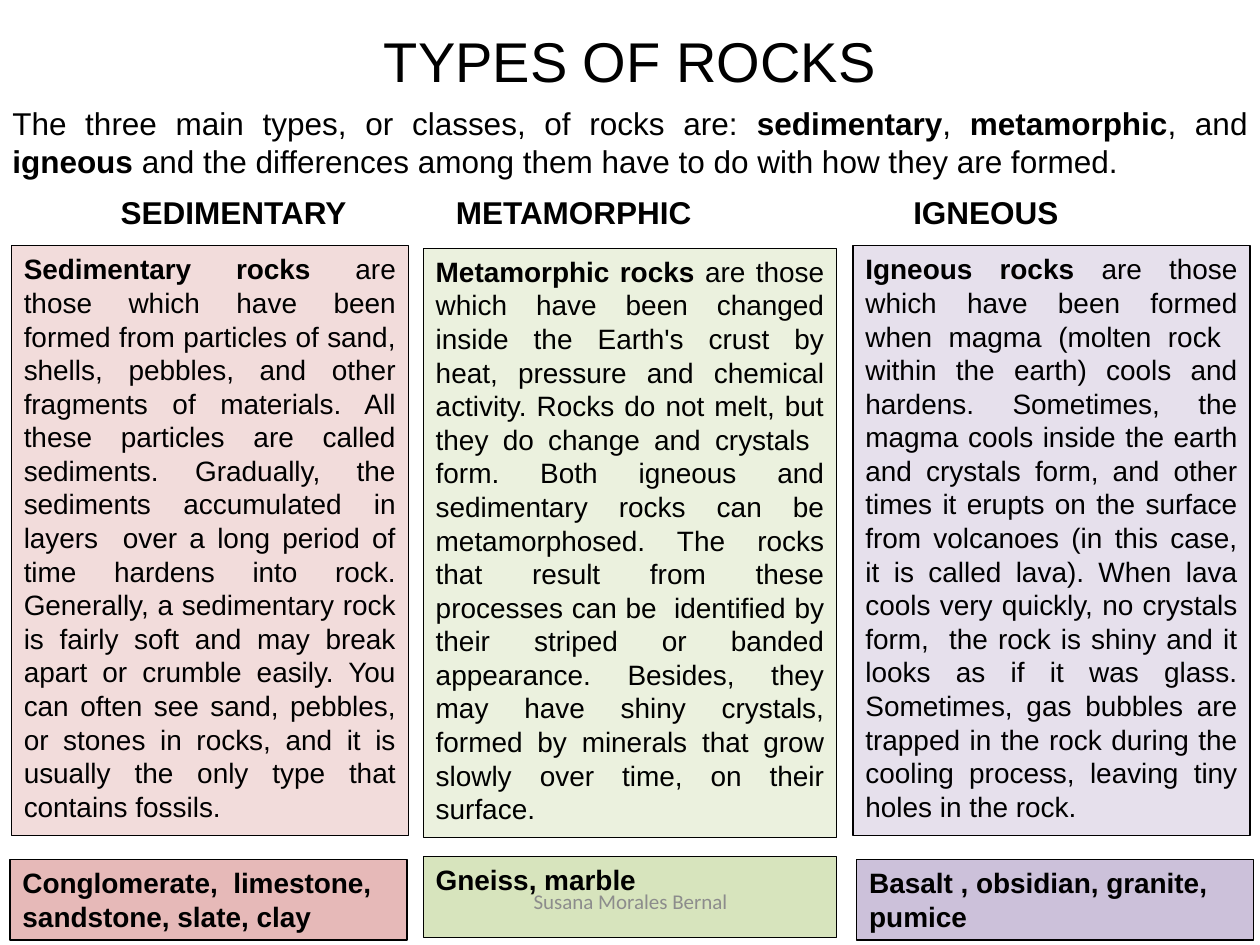
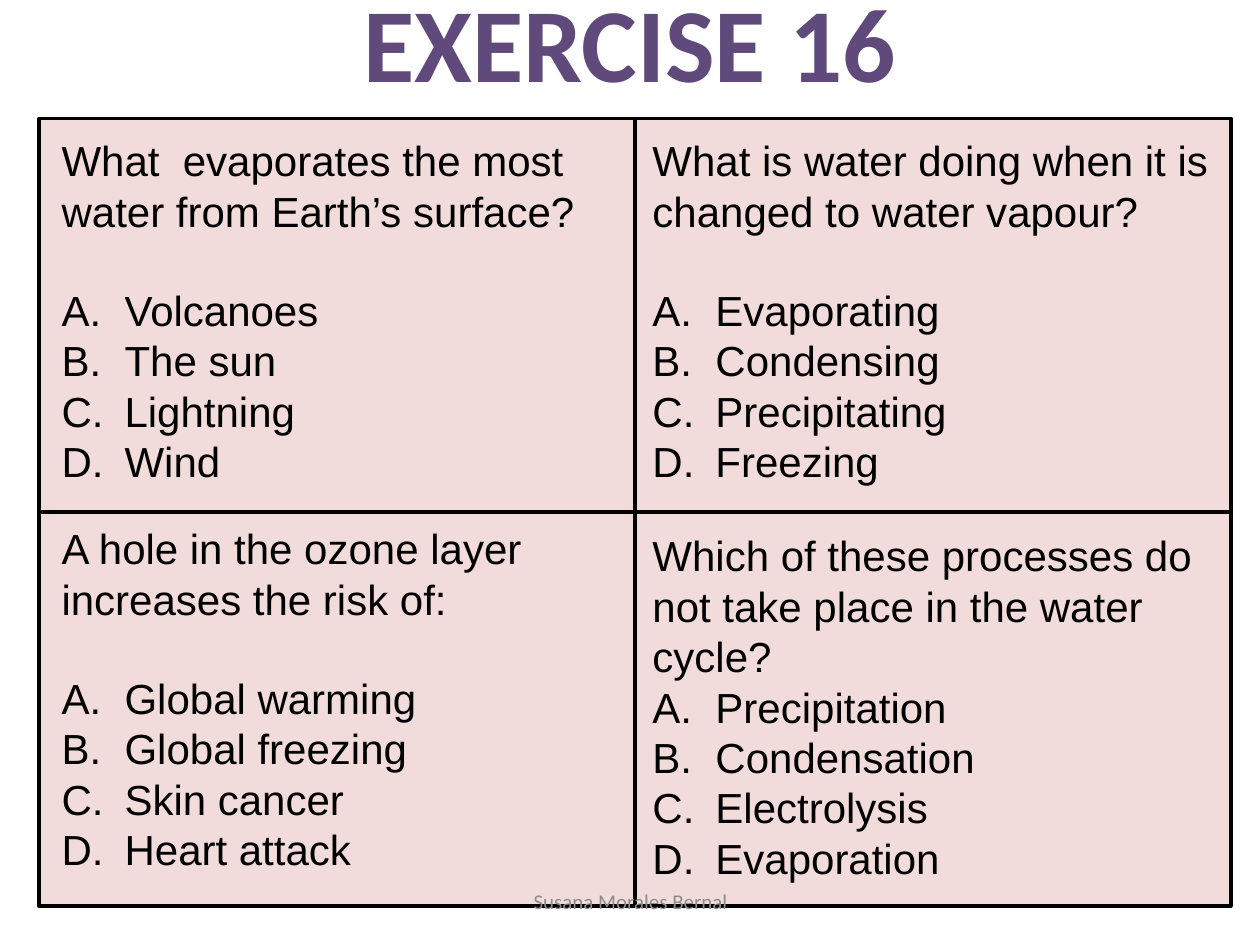
"""Build two science slides: the types of rocks and a four-question exercise."""
from lxml.etree import SubElement
from pptx import Presentation
from pptx.dml.color import RGBColor
from pptx.enum.shapes import MSO_CONNECTOR, MSO_SHAPE
from pptx.enum.text import MSO_ANCHOR, PP_ALIGN
from pptx.oxml.ns import qn
from pptx.util import Inches, Pt

BLACK = RGBColor(0x00, 0x00, 0x00)
GREY = RGBColor(0x8C, 0x8C, 0x8C)
PURPLE = RGBColor(0x60, 0x4A, 0x7B)
PALE_RED = RGBColor(0xF2, 0xDC, 0xDB)
PALE_GREEN = RGBColor(0xEB, 0xF1, 0xDE)
PALE_PURPLE = RGBColor(0xE6, 0xE0, 0xEC)
RED = RGBColor(0xE6, 0xB9, 0xB8)
GREEN = RGBColor(0xD7, 0xE4, 0xBD)
LILAC = RGBColor(0xCC, 0xC1, 0xDA)

FOOTER = "Susana Morales Bernal"
ROCKS_TITLE = "TYPES OF ROCKS"
INTRO = [
    ("The three main types, or classes, of rocks are: ", False),
    ("sedimentary", True), (", ", False), ("metamorphic", True), (", and ", False),
    ("igneous", True),
    (" and the differences among them have to do with how they are formed.", False),
]
ROCKS = [
    {
        "heading": "SEDIMENTARY", "heading_at": (0.86, 1.48, 2.01, 0.4),
        "term": "Sedimentary rocks",
        "text": " are those which have been formed from particles of sand, shells, pebbles, "
                "and other fragments of materials. All these particles are called sediments. "
                "Gradually, the sediments accumulated in layers  over a long period of time "
                "hardens into rock. Generally, a sedimentary rock is fairly soft and may break "
                "apart or crumble easily. You can often see sand, pebbles, or stones in rocks, "
                "and it is usually the only type that contains fossils.",
        "text_at": (0.09, 1.95, 3.15, 4.68), "pale": PALE_RED,
        "examples": "Conglomerate,  limestone, sandstone, slate, clay",
        "examples_at": (0.08, 6.82, 3.15, 0.64), "strong": RED,
    },
    {
        "heading": "METAMORPHIC", "heading_at": (3.52, 1.48, 2.09, 0.4),
        "term": "Metamorphic rocks",
        "text": " are those which have been changed inside the Earth's crust by heat, pressure "
                "and chemical activity. Rocks do not melt, but they do change and crystals  form. "
                "Both igneous and sedimentary rocks can be metamorphosed. The rocks that result "
                "from these processes can be  identified by their striped or banded appearance. "
                "Besides, they may have shiny crystals, formed by minerals that grow slowly over "
                "time, on their surface.",
        "text_at": (3.36, 1.97, 3.28, 4.68), "pale": PALE_GREEN,
        "examples": "Gneiss, marble",
        "examples_at": (3.36, 6.8, 3.28, 0.64), "strong": GREEN,
    },
    {
        "heading": "IGNEOUS", "heading_at": (7.15, 1.48, 1.37, 0.4),
        "term": "Igneous rocks",
        "text": " are those which have been formed when magma (molten rock  within the earth) "
                "cools and hardens. Sometimes, the magma cools inside the earth and crystals form, "
                "and other times it erupts on the surface from volcanoes (in this case, it is "
                "called lava). When lava cools very quickly, no crystals form,  the rock is shiny "
                "and it looks as if it was glass. Sometimes, gas bubbles are trapped in the rock "
                "during the cooling process, leaving tiny holes in the rock.",
        "text_at": (6.77, 1.95, 3.15, 4.68), "pale": PALE_PURPLE,
        "examples": "Basalt , obsidian, granite, pumice",
        "examples_at": (6.8, 6.82, 3.15, 0.64), "strong": LILAC,
    },
]

EXERCISE_TITLE = "EXERCISE 16"
QUESTION_SIZE = (4.61, 2.93)
QUESTIONS = [
    ("What  evaporates the most water from Earth’s surface?",
     ["Volcanoes", "The sun", "Lightning", "Wind"], (0.39, 1.02), 28),
    ("What is water doing when it is changed to water vapour?",
     ["Evaporating", "Condensing", "Precipitating", "Freezing"], (5.08, 1.02), 28),
    ("A hole in the ozone layer increases the risk of:",
     ["Global warming", "Global freezing", "Skin cancer", "Heart attack"], (0.39, 4.1), 28),
    ("Which of these processes do not take place in the water cycle?",
     ["Precipitation", "Condensation", "Electrolysis", "Evaporation"], (5.08, 4.14), 0),
]
GRID = (0.31, 0.94, 9.46, 6.25)


def write(para, spans, align=PP_ALIGN.LEFT, **font):
    """Fill a paragraph with (text, bold) spans in one font."""
    para.alignment = align
    style = {"name": "Arial", "size": 16, "color": BLACK, **font}
    for text, bold in spans:
        span = para.add_run()
        span.text = text
        values = {"name": style["name"], "size": Pt(style["size"]), "bold": bold}
        for key, value in values.items():
            setattr(span.font, key, value)
        span.font.color.rgb = style["color"]


def add_text(page, at, spans, wrap=True, anchor=MSO_ANCHOR.TOP, **style):
    """Add a text box with one paragraph."""
    box = page.shapes.add_textbox(*map(Inches, at))
    box.text_frame.word_wrap = wrap
    box.text_frame.vertical_anchor = anchor
    write(box.text_frame.paragraphs[0], spans, **style)


def add_panel(page, at, fill, line_width=0):
    """Add a filled rectangle, outlined in black when it has a line width."""
    panel = page.shapes.add_shape(MSO_SHAPE.RECTANGLE, *map(Inches, at))
    panel.shadow.inherit = False
    panel.fill.solid()
    panel.fill.fore_color.rgb = fill
    if line_width:
        panel.line.color.rgb = BLACK
        panel.line.width = Pt(line_width)
    else:
        panel.line.fill.background()
    panel.text_frame.word_wrap = True
    panel.text_frame.vertical_anchor = MSO_ANCHOR.TOP
    return panel


def add_divider(page, *ends):
    """Add a straight black grid line."""
    line = page.shapes.add_connector(MSO_CONNECTOR.STRAIGHT, *map(Inches, ends))
    line.line.color.rgb = BLACK
    line.line.width = Pt(2.25)
    SubElement(line._element.spPr, qn("a:effectLst"))


def add_letter(para):
    """Number a paragraph A., B., C. with a hanging indent."""
    properties = para._p.get_or_add_pPr()
    properties.set("marL", str(Inches(0.5)))
    properties.set("indent", str(-Inches(0.5)))
    SubElement(properties, qn("a:buFont"), typeface="+mj-lt")
    SubElement(properties, qn("a:buAutoNum"), type="alphaUcPeriod")


def add_footer(page):
    """Add the shared footer."""
    add_text(page, (3.42, 6.95, 3.17, 0.4), [(FOOTER, False)], anchor=MSO_ANCHOR.MIDDLE,
             align=PP_ALIGN.CENTER, name="Calibri", size=12, color=GREY)


def build_rocks(page):
    """Lay out the three rock columns."""
    add_text(page, (0, 0.16, 10, 0.64), [(ROCKS_TITLE, False)],
             align=PP_ALIGN.CENTER, size=32)
    add_text(page, (0, 0.78, 10, 0.71), INTRO, align=PP_ALIGN.JUSTIFY, size=18)
    for rock in ROCKS:
        add_text(page, rock["heading_at"], [(rock["heading"], True)], wrap=False, size=18)
        panel = add_panel(page, rock["text_at"], rock["pale"], 0.75)
        write(panel.text_frame.paragraphs[0],
              [(rock["term"], True), (rock["text"], False)], align=PP_ALIGN.JUSTIFY)
        panel = add_panel(page, rock["examples_at"], rock["strong"], 0.75)
        write(panel.text_frame.paragraphs[0], [(rock["examples"], True)])
    add_footer(page)


def build_exercise(page):
    """Lay out the four questions in a two by two grid."""
    add_text(page, (0, -0.23, 10, 1.11), [(EXERCISE_TITLE, True)],
             align=PP_ALIGN.CENTER, name="Calibri", size=60, color=PURPLE)
    left, top, width, height = GRID
    add_panel(page, GRID, PALE_RED, 2)
    center, middle = left + width / 2, top + height / 2
    add_divider(page, center, top, center, top + height)
    add_divider(page, left, middle, left + width, middle)
    for question, answers, corner, gap in QUESTIONS:
        frame = add_panel(page, corner + QUESTION_SIZE, PALE_RED).text_frame
        if not gap:
            frame.vertical_anchor = MSO_ANCHOR.MIDDLE
        para = frame.paragraphs[0]
        write(para, [(question, False)], size=24)
        para.space_after = Pt(gap)
        for answer in answers:
            para = frame.add_paragraph()
            write(para, [(answer, False)], size=24)
            add_letter(para)
    add_footer(page)


def main():
    """Build and save the deck."""
    deck = Presentation()
    deck.slide_width, deck.slide_height = Inches(10), Inches(7.5)
    for build in (build_rocks, build_exercise):
        build(deck.slides.add_slide(deck.slide_layouts[6]))
    deck.save("out.pptx")


if __name__ == "__main__":
    main()
